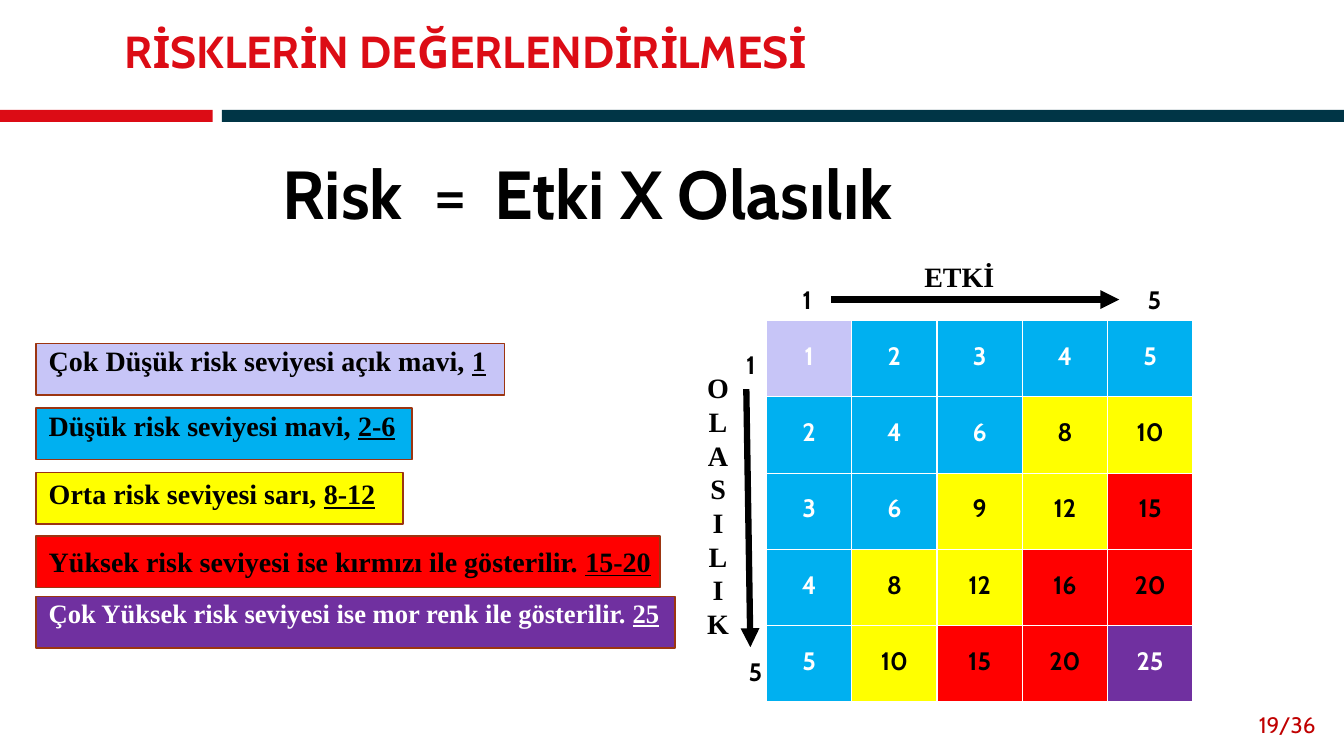
from dataclasses import dataclass

from lxml import etree
from pptx import Presentation
from pptx.dml.color import RGBColor
from pptx.enum.shapes import MSO_CONNECTOR, MSO_SHAPE
from pptx.enum.text import MSO_ANCHOR, PP_ALIGN
from pptx.oxml.ns import qn
from pptx.util import Pt

RECTANGLE = MSO_SHAPE.RECTANGLE
STRAIGHT = MSO_CONNECTOR.STRAIGHT
TOP, MIDDLE = MSO_ANCHOR.TOP, MSO_ANCHOR.MIDDLE
LEFT, CENTER, RIGHT = PP_ALIGN.LEFT, PP_ALIGN.CENTER, PP_ALIGN.RIGHT


@dataclass(frozen=True)
class Theme:
    heading_font: str = "Cabin"
    label_font: str = "Times New Roman"
    title_size: float = 32
    formula_size: float = 48.5
    label_size: float = 20
    small_label_size: float = 19
    number_size: float = 18
    page_size: float = 16
    accent: str = "DC0C15"
    dark: str = "003546"
    outline: str = "9C3511"
    page: str = "C00000"
    black: str = "000000"
    white: str = "FFFFFF"
    lavender: str = "C7C5F7"
    blue: str = "00B0F0"
    yellow: str = "FFFF00"
    red: str = "FF0000"
    purple: str = "7030A0"


THEME = Theme()

# Highest score of each risk level, its fill and the colour of its scores
LEVELS = [
    (1, THEME.lavender, THEME.white),
    (6, THEME.blue, THEME.white),
    (12, THEME.yellow, THEME.black),
    (20, THEME.red, THEME.black),
    (25, THEME.purple, THEME.white),
]

# Offset from the legend top, bar width, space above the text, wording, range
LEGEND = [
    (0, 334.8, 0, "Çok Düşük risk seviyesi açık mavi, ", "1"),
    (46, 268.6, 0, "Düşük risk seviyesi mavi, ", "2-6"),
    (92, 262, 3, "Orta risk seviyesi sarı, ", "8-12"),
    (137.5, 445.7, 6, "Yüksek risk seviyesi ise kırmızı ile gösterilir. ", "15-20"),
    (180.7, 456.5, 0, "Çok Yüksek risk seviyesi ise mor renk ile gösterilir. ", "25"),
]


def color(value):
    return RGBColor.from_string(value)


def style(paragraph, size, value, font=THEME.heading_font, bold=True, align=LEFT):
    paragraph.alignment = align
    paragraph.font.name = font
    paragraph.font.size = Pt(size)
    paragraph.font.bold = bold
    paragraph.font.color.rgb = color(value)


def add_text(slide, box, text, size, value, anchor=TOP, **look):
    shape = slide.shapes.add_textbox(*map(Pt, box))
    frame = shape.text_frame
    frame.word_wrap = True
    frame.vertical_anchor = anchor
    paragraph = frame.paragraphs[0]
    paragraph.text = text
    style(paragraph, size, value, **look)
    return paragraph


def add_bar(slide, box, fill, line=None):
    shape = slide.shapes.add_shape(RECTANGLE, *map(Pt, box))
    shape.shadow.inherit = False
    shape.fill.solid()
    shape.fill.fore_color.rgb = color(fill)
    if line:
        shape.line.color.rgb = color(line)
        shape.line.width = Pt(1)
    else:
        shape.line.fill.background()
    return shape


def add_arrow(slide, start, end):
    arrow = slide.shapes.add_connector(STRAIGHT, *map(Pt, start + end))
    arrow.line.color.rgb = color(THEME.black)
    arrow.line.width = Pt(4.5)
    line = arrow.line.fill._xPr
    etree.SubElement(line, qn("a:tailEnd"), type="triangle")
    etree.SubElement(arrow._element.spPr, qn("a:effectLst"))


def add_axis_mark(slide, left, top, text):
    shape = add_bar(slide, (left, top, 15, 15), THEME.white, THEME.white)
    frame = shape.text_frame
    frame.word_wrap = False
    frame.vertical_anchor = MIDDLE
    frame.margin_left = Pt(5)
    frame.margin_right = frame.margin_top = frame.margin_bottom = 0
    frame.paragraphs[0].text = text
    style(frame.paragraphs[0], THEME.number_size, THEME.black, align=CENTER)


def add_header(slide, left, top, width):
    # Title above a two-colour rule
    title = add_text(slide, (left + 82, top + 10, 865, 57.6),
                     "RİSKLERİN DEĞERLENDİRİLMESİ",
                     THEME.title_size, THEME.accent, anchor=MIDDLE)
    title.line_spacing = 0.9
    add_bar(slide, (left, top + 78.5, 152, 8.6), THEME.accent)
    add_bar(slide, (left + 158.5, top + 78.5, width - 158.5, 8.6), THEME.dark)


def add_formula(slide, left, top):
    for offset, width, text, bold in [(0, 115.2, "Risk", True),
                                      (107.3, 56.2, "=", False),
                                      (151.2, 335.5, "Etki X Olasılık", True)]:
        add_text(slide, (left + offset, top, width, 66.2), text,
                 THEME.formula_size, THEME.black, bold=bold)


def add_legend(slide, left, top):
    for (limit, fill, _), (offset, width, inset, wording, scores) in zip(LEVELS, LEGEND):
        shape = add_bar(slide, (left, top + offset, width, 36.7), fill, THEME.outline)
        frame = shape.text_frame
        frame.word_wrap = False
        frame.vertical_anchor = TOP
        frame.margin_left = Pt(9)
        frame.margin_top = Pt(inset)
        frame.margin_right = frame.margin_bottom = 0
        paragraph = frame.paragraphs[0]
        paragraph.add_run().text = wording
        score_run = paragraph.add_run()
        score_run.text = scores
        score_run.font.underline = True
        highest = limit == LEVELS[-1][0]
        style(paragraph, THEME.small_label_size if highest else THEME.label_size,
              THEME.white if highest else THEME.black, font=THEME.label_font)


def add_matrix(slide, left, top, width, height):
    # Each score is impact times likelihood
    size = 5
    table = slide.shapes.add_table(size, size, *map(Pt, (left, top, width, height))).table
    table.horz_banding = False
    for row in range(size):
        for column in range(size):
            score = (row + 1) * (column + 1)
            fill, ink = next(level[1:] for level in LEVELS if score <= level[0])
            cell = table.cell(row, column)
            cell.fill.solid()
            cell.fill.fore_color.rgb = color(fill)
            cell.margin_top = Pt(14.6)
            paragraph = cell.text_frame.paragraphs[0]
            paragraph.text = str(score)
            style(paragraph, THEME.number_size, ink, align=CENTER)

    # Impact axis along the top
    add_text(slide, (left + 34.5, top - 47.5, 206.6, 31.7), "ETKİ",
             THEME.label_size, THEME.black, font=THEME.label_font, align=CENTER)
    add_axis_mark(slide, left + 19, top - 22.3, "1")
    add_arrow(slide, (left + 46, top - 15), (left + 252, top - 15))
    add_axis_mark(slide, left + 267, top - 22.3, "5")

    # Likelihood axis down the side, one letter to a line
    add_text(slide, (left - 49.7, top + 32.4, 30.24, 201), "OLASILIK",
             THEME.label_size, THEME.black, font=THEME.label_font, align=CENTER)
    add_axis_mark(slide, left - 21.3, top + 23.5, "1")
    add_arrow(slide, (left - 14.4, top + 49), (left - 11.5, top + 233.3))
    add_axis_mark(slide, left - 18, top + 243, "5")


def main():
    presentation = Presentation()
    presentation.slide_width = Pt(960)
    presentation.slide_height = Pt(540)
    slide = presentation.slides.add_slide(presentation.slide_layouts[6])

    add_header(slide, 0, 0, 960)
    add_formula(slide, 195, 105)
    add_legend(slide, 25.8, 245.5)
    add_matrix(slide, 547.5, 229, 304.5, 272.5)
    add_text(slide, (882, 503.3, 64.8, 28.8), "19/36", THEME.page_size, THEME.page,
             anchor=MIDDLE, bold=False, align=RIGHT)

    presentation.save("out.pptx")


if __name__ == "__main__":
    main()
